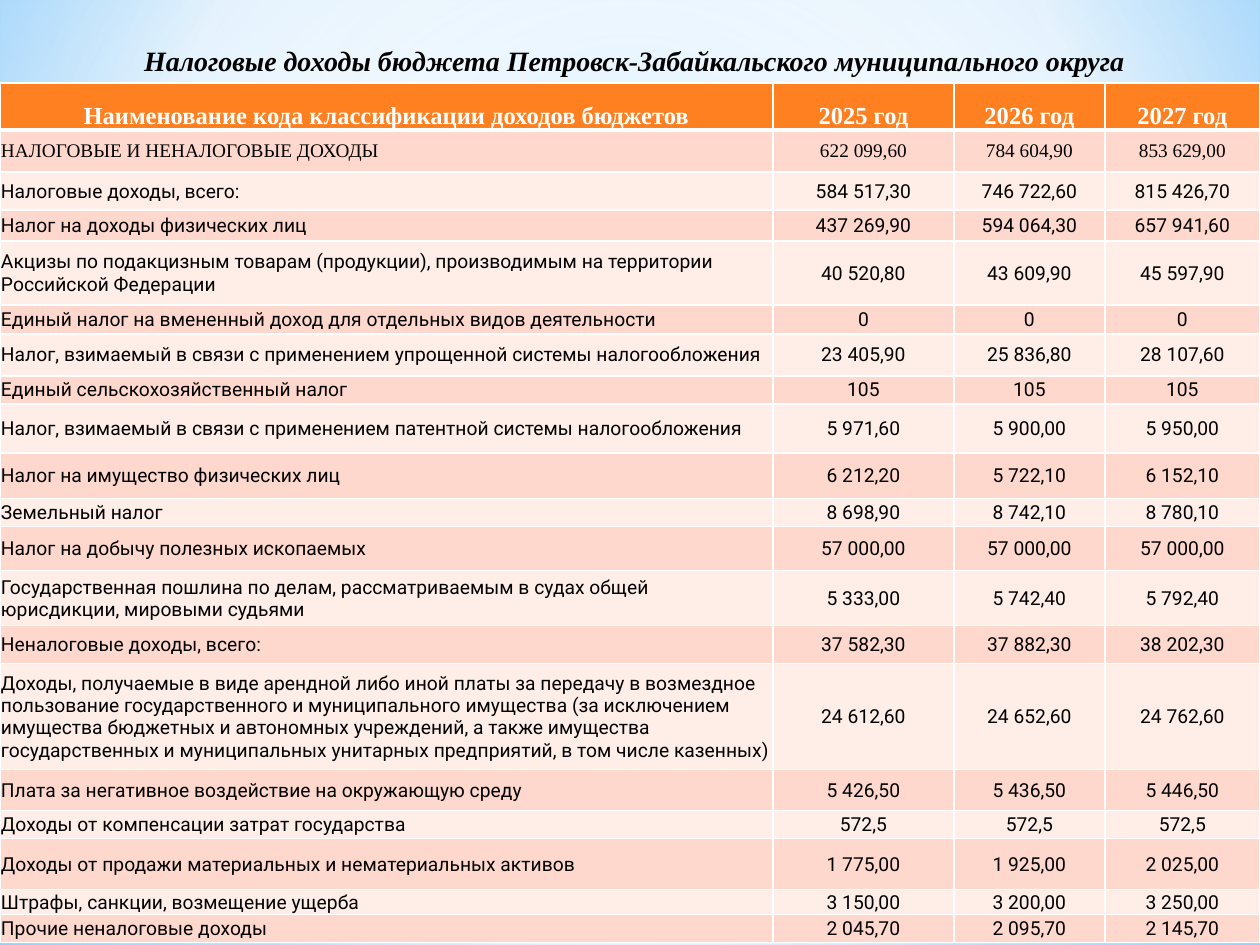
from dataclasses import dataclass

from lxml import etree
from pptx import Presentation
from pptx.dml.color import RGBColor
from pptx.enum.shapes import MSO_SHAPE
from pptx.enum.text import MSO_ANCHOR, MSO_AUTO_SIZE, PP_ALIGN
from pptx.oxml import parse_xml
from pptx.oxml.ns import nsdecls
from pptx.util import Emu, Pt

LEFT, CENTER = PP_ALIGN.LEFT, PP_ALIGN.CENTER
MIDDLE, BOTTOM = MSO_ANCHOR.MIDDLE, MSO_ANCHOR.BOTTOM
GROW = MSO_AUTO_SIZE.SHAPE_TO_FIT_TEXT
RECTANGLE = MSO_SHAPE.RECTANGLE
TITLE_ONLY = 5
PX_PER_INCH = 126


@dataclass(frozen=True)
class Theme:
    serif: str = "Times New Roman"
    sans: str = "Roboto"
    text: str = "000000"
    light: str = "FFFFFF"
    header_fill: str = "FF8021"
    bands: tuple = ("FFD8CD", "FFEDE8")
    title_size: int = 16
    header_size: int = 14
    body_size: int = 11
    thin: int = 1
    thick: int = 3
    # Gradient stops: position %, colour, opacity %
    sky: tuple = ((0, "9ED5FF", 100), (60, "FFFFFF", 100), (100, "5BB9FF", 100))
    upper_wash: tuple = ((0, "FFFFFF", 89), (48, "FFFFFF", 62), (100, "B4DCFA", 79))
    lower_wash: tuple = ((0, "FFFFFF", 91), (37, "FFFFFF", 76), (100, "B4DCFA", 79))


THEME = Theme()
TITLE = "Налоговые доходы бюджета Петровск-Забайкальского муниципального округа"
COLUMN_WIDTHS = (773, 181, 151, 155)
HEADER_HEIGHT = 47
HEADER = ("Наименование кода классификации доходов бюджетов",
          "2025 год", "2026 год", "2027 год")
# Row height, name, then the amount for each year
INCOME = (
    (42, "НАЛОГОВЫЕ И НЕНАЛОГОВЫЕ ДОХОДЫ", "622 099,60", "784 604,90", "853 629,00"),
    (38, "Налоговые доходы, всего:", "584 517,30", "746 722,60", "815 426,70"),
    (31, "Налог на доходы физических лиц", "437 269,90", "594 064,30", "657 941,60"),
    (64, "Акцизы по подакцизным товарам (продукции), производимым на территории "
         "Российской Федерации", "40 520,80", "43 609,90", "45 597,90"),
    (29, "Единый налог на вмененный доход для отдельных видов деятельности",
     "0", "0", "0"),
    (42, "Налог, взимаемый в связи с применением упрощенной системы налогообложения",
     "23 405,90", "25 836,80", "28 107,60"),
    (28, "Единый сельскохозяйственный налог", "105", "105", "105"),
    (49, "Налог, взимаемый в связи с применением патентной системы налогообложения",
     "5 971,60", "5 900,00", "5 950,00"),
    (46, "Налог на имущество физических лиц", "6 212,20", "5 722,10", "6 152,10"),
    (28, "Земельный налог", "8 698,90", "8 742,10", "8 780,10"),
    (44, "Налог на добычу полезных ископаемых",
     "57 000,00", "57 000,00", "57 000,00"),
    (55, "Государственная пошлина по делам, рассматриваемым в судах общей "
         "юрисдикции, мировыми судьями", "5 333,00", "5 742,40", "5 792,40"),
    (38, "Неналоговые доходы, всего:", "37 582,30", "37 882,30", "38 202,30"),
    (106, "Доходы, получаемые в виде арендной либо иной платы за передачу в возмездное "
          "пользование государственного и муниципального имущества (за исключением "
          "имущества бюджетных и автономных учреждений, а также имущества "
          "государственных и муниципальных унитарных предприятий, в том числе казенных)",
     "24 612,60", "24 652,60", "24 762,60"),
    (41, "Плата за негативное воздействие на окружающую среду",
     "5 426,50", "5 436,50", "5 446,50"),
    (28, "Доходы от компенсации затрат государства", "572,5", "572,5", "572,5"),
    (51, "Доходы от продажи материальных и нематериальных активов",
     "1 775,00", "1 925,00", "2 025,00"),
    (25, "Штрафы, санкции, возмещение ущерба", "3 150,00", "3 200,00", "3 250,00"),
    (28, "Прочие неналоговые доходы", "2 045,70", "2 095,70", "2 145,70"),
)


def px(length):
    return Emu(round(length * 914400 / PX_PER_INCH))


def add_run(paragraph, text, font, size, color, bold=False, italic=False):
    run = paragraph.add_run()
    run.text = text
    run.font.name, run.font.size = font, Pt(size)
    run.font.bold, run.font.italic = bold, italic
    run.font.color.rgb = RGBColor.from_string(color)


def radial_gradient(stops, focus):
    """Return a circular gradFill; focus is left, top, right, bottom in percent."""
    marks = "".join(
        f'<a:gs pos="{pos * 1000}"><a:srgbClr val="{color}">'
        f'<a:alpha val="{opacity * 1000}"/></a:srgbClr></a:gs>'
        for pos, color, opacity in stops)
    left, top, right, bottom = (side * 1000 for side in focus)
    return parse_xml(
        f'<a:gradFill {nsdecls("a")} rotWithShape="1"><a:gsLst>{marks}</a:gsLst>'
        f'<a:path path="circle"><a:fillToRect l="{left}" t="{top}" r="{right}" '
        f'b="{bottom}"/></a:path></a:gradFill>')


def set_gradient(fill, holder, stops, focus):
    fill.solid()
    solid = holder.find(".//{*}solidFill")
    solid.getparent().replace(solid, radial_gradient(stops, focus))


def add_backdrop(slide, x, y, width, height):
    background = slide.background
    set_gradient(background.fill, slide.element.find(".//{*}bg"),
                 THEME.sky, (20, 10, 20, 60))
    horizon = 703
    for top, bottom, stops in ((horizon, height, THEME.lower_wash),
                               (0, horizon, THEME.upper_wash)):
        wash = slide.shapes.add_shape(RECTANGLE, px(x), px(y + top),
                                      px(width), px(bottom - top))
        wash.shadow.inherit = False
        wash.line.fill.background()
        set_gradient(wash.fill, wash.element.spPr, stops, (50, 50, 50, 50))


def place_title(slide, x, y, width, height):
    """Format the title placeholder and bring it in front of the backdrop."""
    title = slide.shapes.title
    title.element.getparent().append(title.element)
    title.left, title.top, title.width, title.height = map(px, (x, y, width, height))
    frame = title.text_frame
    frame.word_wrap, frame.auto_size = True, GROW
    frame.vertical_anchor = MIDDLE
    paragraph = frame.paragraphs[0]
    paragraph.alignment = CENTER
    add_run(paragraph, TITLE, THEME.serif, THEME.title_size, THEME.text, True, True)


def set_borders(cell, top, bottom):
    properties = cell._tc.get_or_add_tcPr()
    for side, points in (("L", THEME.thin), ("R", THEME.thin), ("T", top), ("B", bottom)):
        properties.append(etree.fromstring(
            f'<a:ln{side} {nsdecls("a")} w="{Pt(points)}"><a:solidFill>'
            f'<a:srgbClr val="{THEME.light}"/></a:solidFill></a:ln{side}>'))


def fill_cell(cell, text, row, column):
    is_header = row == 0
    set_borders(cell, THEME.thick if row == 1 else THEME.thin,
                THEME.thick if is_header else THEME.thin)
    cell.fill.solid()
    cell.fill.fore_color.rgb = RGBColor.from_string(
        THEME.header_fill if is_header else THEME.bands[(row - 1) % 2])
    cell.margin_left = cell.margin_right = cell.margin_top = px(1)
    cell.margin_bottom = 0
    cell.vertical_anchor = BOTTOM if is_header else MIDDLE
    paragraph = cell.text_frame.paragraphs[0]
    paragraph.alignment = CENTER if is_header or column else LEFT
    if is_header:
        add_run(paragraph, text, THEME.serif, THEME.header_size, THEME.light, bold=True)
    else:
        font = THEME.serif if row == 1 else THEME.sans
        add_run(paragraph, text, font, THEME.body_size, THEME.text)


def add_income_table(slide, x, y, width, height):
    rows = ((HEADER_HEIGHT, *HEADER), *INCOME)
    table = slide.shapes.add_table(len(rows), len(HEADER), px(x), px(y),
                                   px(width), px(height)).table
    for column, column_width in zip(table.columns, COLUMN_WIDTHS):
        column.width = px(column_width)
    for row, (row_height, *texts) in enumerate(rows):
        table.rows[row].height = px(row_height)
        for column, text in enumerate(texts):
            fill_cell(table.cell(row, column), text, row, column)


def main():
    width, height = 1260, 945
    deck = Presentation()
    deck.slide_width, deck.slide_height = px(width), px(height)
    slide = deck.slides.add_slide(deck.slide_layouts[TITLE_ONLY])
    add_backdrop(slide, 0, 0, width, height)
    place_title(slide, 44, 37, 1181, 46)
    add_income_table(slide, 0, 83, width, 860)
    deck.save("out.pptx")


if __name__ == "__main__":
    main()
